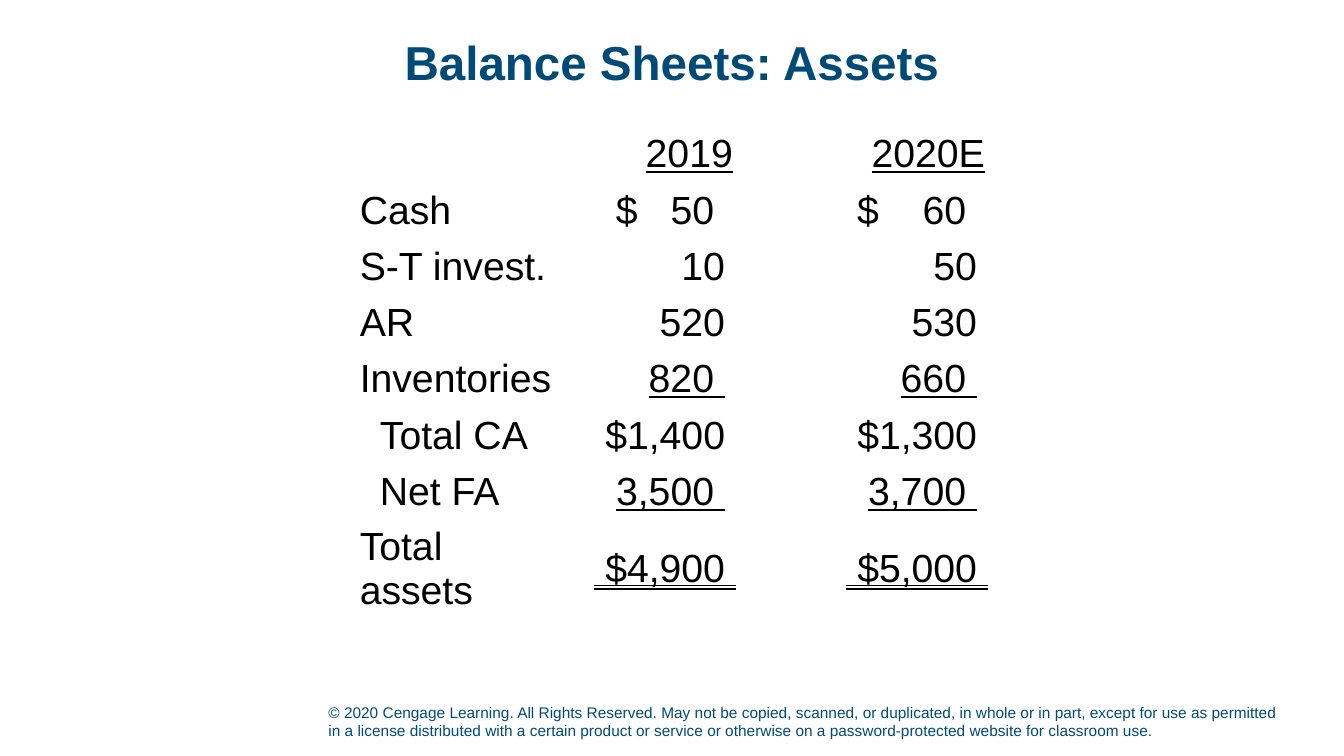
"""Build a slide with a table of balance sheet assets for two years."""
from typing import NamedTuple

from lxml import etree
from pptx import Presentation, util as u
from pptx.dml import color
from pptx.enum import text
from pptx.oxml import ns

NAVY = color.RGBColor(0x00, 0x4A, 0x78)
BLACK = color.RGBColor(0x00, 0x00, 0x00)
FONT = "Arial"
SIZE = 28
SPACE = 7.78
INSET = 5
WIDTHS = (158.4, 122.4, 180)
HEIGHT = 40.2
WIDE, SHORT = 85.6, 77.8
DOUBLE = text.MSO_UNDERLINE.DOUBLE_LINE
LEFT, RIGHT, CENTER = text.PP_ALIGN.LEFT, text.PP_ALIGN.RIGHT, text.PP_ALIGN.CENTER
MIDDLE, BOTTOM = text.MSO_ANCHOR.MIDDLE, text.MSO_ANCHOR.BOTTOM


class Amount(NamedTuple):
    words: str
    line: object = False
    span: float = 0


class Row(NamedTuple):
    label: str
    first: Amount
    second: Amount
    indent: float = 0


ROWS = (
    Row("Cash", Amount("$\t50 ", span=SHORT), Amount("$\t60 ", span=WIDE)),
    Row("S-T invest.", Amount("10 "), Amount("50 ")),
    Row("AR", Amount("520 "), Amount("530 ")),
    Row("Inventories", Amount("\t820 ", True, WIDE), Amount("\t660 ", True, SHORT)),
    Row("Total CA", Amount("$1,400 "), Amount("$1,300 "), 14.4),
    Row("Net FA", Amount("\t3,500 ", True, WIDE), Amount("\t3,700 ", True, SHORT), 14.4),
    Row("Total assets", Amount(" $4,900 ", DOUBLE), Amount(" $5,000 ", DOUBLE)),
)


def write(frame, words: str, *, size: float = SIZE, hue=BLACK, bold: bool = False,
          line=False, align=LEFT, gap: float = 1, tab: float = 0) -> None:
    para = frame.paragraphs[0]
    para.alignment = align
    para.line_spacing = gap
    if tab:
        props = para._p.get_or_add_pPr()
        stops = etree.SubElement(props, ns.qn("a:tabLst"))
        etree.SubElement(stops, ns.qn("a:tab"), pos=str(u.Pt(tab)), algn="r")
    run = para.add_run()
    run.text = words
    font = run.font
    font.name, font.size, font.bold = FONT, u.Pt(size), bold
    font.underline = line
    font.color.rgb = hue


def place(shape, left: float, top: float, width: float, height: float) -> None:
    shape.left, shape.top = u.Pt(left), u.Pt(top)
    shape.width, shape.height = u.Pt(width), u.Pt(height)


def put_amount(cell, amount: Amount, width: float) -> None:
    cell.margin_top = cell.margin_bottom = 0
    cell.margin_left = cell.margin_right = u.Pt(INSET)
    if amount.span:
        cell.margin_left = u.Pt(width - INSET - SPACE - amount.span)
    write(cell.text_frame, amount.words, line=amount.line, tab=amount.span,
          align=LEFT if amount.span else RIGHT)


def add_assets(slide) -> None:
    frame = slide.shapes.add_table(len(ROWS) + 1, len(WIDTHS), u.Pt(249.8), u.Pt(90),
                                   u.Pt(sum(WIDTHS)), u.Pt(HEIGHT * (len(ROWS) + 1)))
    table = frame.table
    table.first_row = table.horz_banding = False
    for col, width in zip(table.columns, WIDTHS):
        col.width = u.Pt(width)
    for row in table.rows:
        row.height = u.Pt(HEIGHT)
    for cell in table.iter_cells():
        cell.fill.background()
        cell.vertical_anchor = MIDDLE
    for col, year in enumerate(("2019", "2020E"), 1):
        write(table.cell(0, col).text_frame, year, line=True, align=RIGHT)
    for index, row in enumerate(ROWS, 1):
        label = table.cell(index, 0)
        label.margin_left = u.Pt(7.2 + row.indent)
        write(label.text_frame, row.label)
        for col, amount in enumerate((row.first, row.second), 1):
            put_amount(table.cell(index, col), amount, WIDTHS[col])


def main() -> None:
    deck = Presentation()
    deck.slide_width, deck.slide_height = u.Pt(960), u.Pt(540)
    slide = deck.slides.add_slide(deck.slide_layouts[5])

    title = slide.shapes.title
    place(title, 66, 10.8, 828, 72)
    title.text_frame.vertical_anchor = MIDDLE
    write(title.text_frame, "Balance Sheets: Assets", size=34, hue=NAVY, bold=True,
          align=CENTER, gap=0.9)

    add_assets(slide)

    notice = slide.shapes.add_textbox(u.Pt(227.5), u.Pt(496), u.Pt(693.4), u.Pt(36))
    notice.text_frame.word_wrap = True
    notice.text_frame.vertical_anchor = BOTTOM
    write(notice.text_frame,
          "© 2020 Cengage Learning. All Rights Reserved. May not be copied, scanned, "
          "or duplicated, in whole or in part, except for use as permitted in a license "
          "distributed with a certain product or service or otherwise on a "
          "password-protected website for classroom use.", size=11, hue=NAVY)

    deck.save("out.pptx")


if __name__ == "__main__":
    main()
